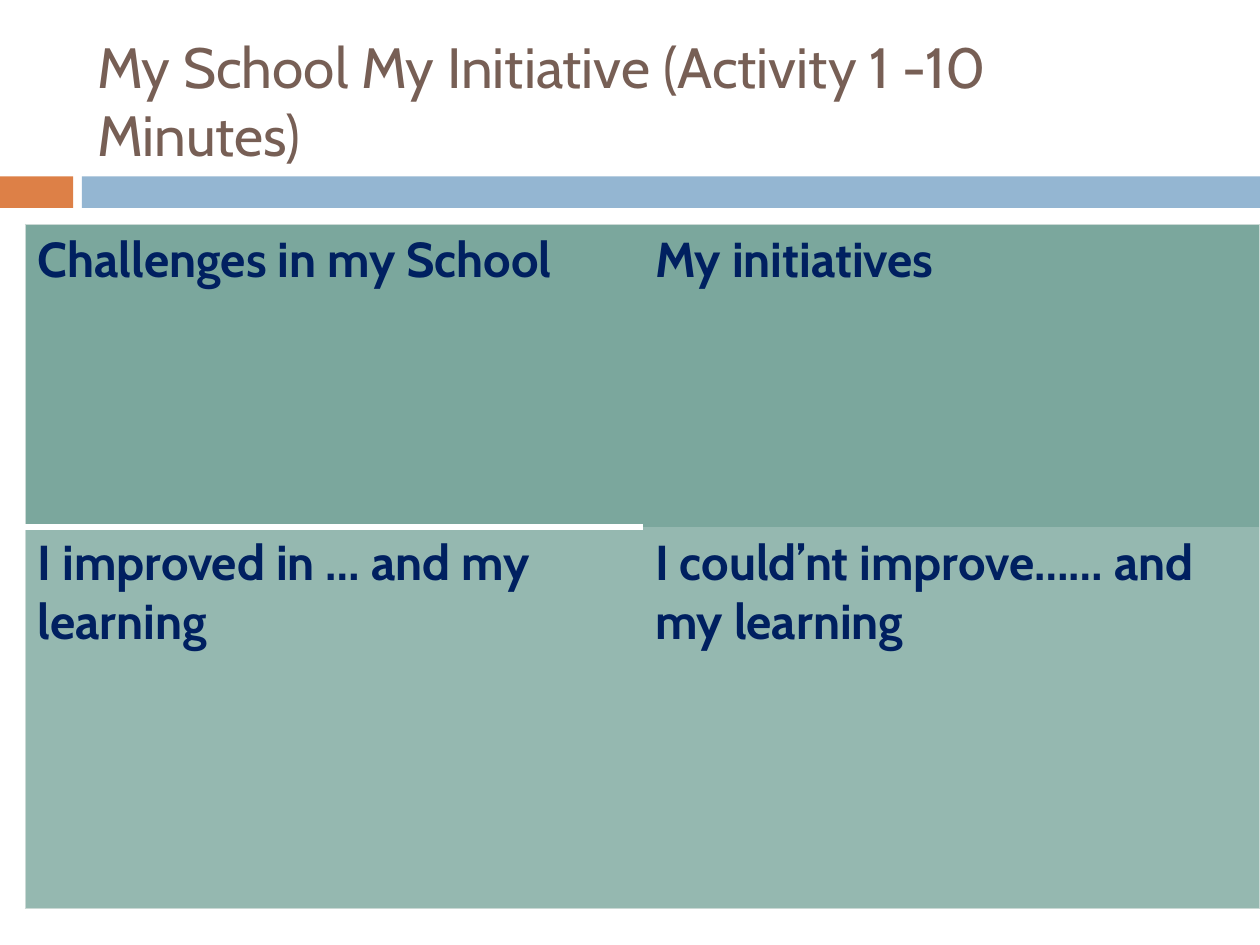
from pptx import Presentation
from pptx.dml.color import RGBColor
from pptx.enum.shapes import MSO_SHAPE
from pptx.enum.text import MSO_ANCHOR, PP_ALIGN
from pptx.oxml.ns import qn
from pptx.util import Inches, Pt
from lxml.etree import SubElement


def color(value):
    return RGBColor.from_string(value)


class ActivitySlide:
    """Holds the style and the slide, and adds each kind of element."""

    font = "Cabin"
    title_color = "775F55"
    cell_color = "002060"
    outline = ("CBD9D5", 0.79)
    divider = ("FFFFFF", 3.75)
    row_fills = ("7BA79D", "95B8B0")

    def __init__(self, deck):
        self.slide = deck.slides.add_slide(deck.slide_layouts[5])

    def format_text(self, paragraph, size, text_color, bold=False):
        paragraph.alignment = PP_ALIGN.LEFT
        for run in paragraph.runs:
            run.font.name = self.font
            run.font.size = Pt(size)
            run.font.bold = bold
            run.font.color.rgb = color(text_color)

    def title(self, text):
        heading = self.slide.shapes.title
        heading.left, heading.top = Inches(0.67), Inches(0.25)
        heading.width, heading.height = Inches(8.92), Inches(1.08)
        frame = heading.text_frame
        frame.text = text
        frame.word_wrap = True
        frame.vertical_anchor = MSO_ANCHOR.MIDDLE
        frame.margin_right = Inches(0.3)
        self.format_text(frame.paragraphs[0], 32.4, self.title_color)

    def bar(self, left, width, fill):
        band = self.slide.shapes.add_shape(
            MSO_SHAPE.RECTANGLE, Inches(left), Inches(1.4), Inches(width), Inches(0.25))
        band.shadow.inherit = False
        band.fill.solid()
        band.fill.fore_color.rgb = color(fill)
        band.line.fill.background()

    def border(self, cell, side, style):
        properties = cell._tc.get_or_add_tcPr()
        edge = SubElement(properties, qn(f"a:ln{side}"))
        if style is None:
            SubElement(edge, qn("a:noFill"))
            return
        edge_color, width = style
        edge.set("w", str(int(Pt(width))))
        fill = SubElement(edge, qn("a:solidFill"))
        SubElement(fill, qn("a:srgbClr"), val=edge_color)

    def cell_borders(self, cell, row, column):
        middle = self.divider if column == 0 else None
        edges = {
            "L": self.outline if column == 0 else None,
            "R": self.outline if column == 1 else None,
            "T": self.outline if row == 0 else middle,
            "B": self.outline if row == 1 else middle,
        }
        for side, style in edges.items():
            self.border(cell, side, style)

    def table(self, prompts, row_heights):
        grid = self.slide.shapes.add_table(
            len(prompts), len(prompts[0]), Inches(0.2), Inches(1.78),
            Inches(9.8), Inches(sum(row_heights))).table
        for row, (texts, height) in enumerate(zip(prompts, row_heights)):
            grid.rows[row].height = Inches(height)
            for column, text in enumerate(texts):
                cell = grid.cell(row, column)
                cell.text_frame.text = text
                self.format_text(cell.text_frame.paragraphs[0], 28, self.cell_color, True)
                self.cell_borders(cell, row, column)
                cell.fill.solid()
                cell.fill.fore_color.rgb = color(self.row_fills[row])


def main():
    deck = Presentation()
    deck.slide_width, deck.slide_height = Inches(10), Inches(7.5)
    activity = ActivitySlide(deck)
    activity.bar(0, 0.58, "DD8047")
    activity.bar(0.65, 9.35, "94B6D2")
    activity.title("My School My Initiative (Activity 1 -10 Minutes)")
    activity.table(
        [("Challenges in my School", "My initiatives"),
         ("I improved in … and my learning", "I could’nt improve…… and my learning")],
        (2.4, 3.03))
    deck.save("out.pptx")


if __name__ == "__main__":
    main()
